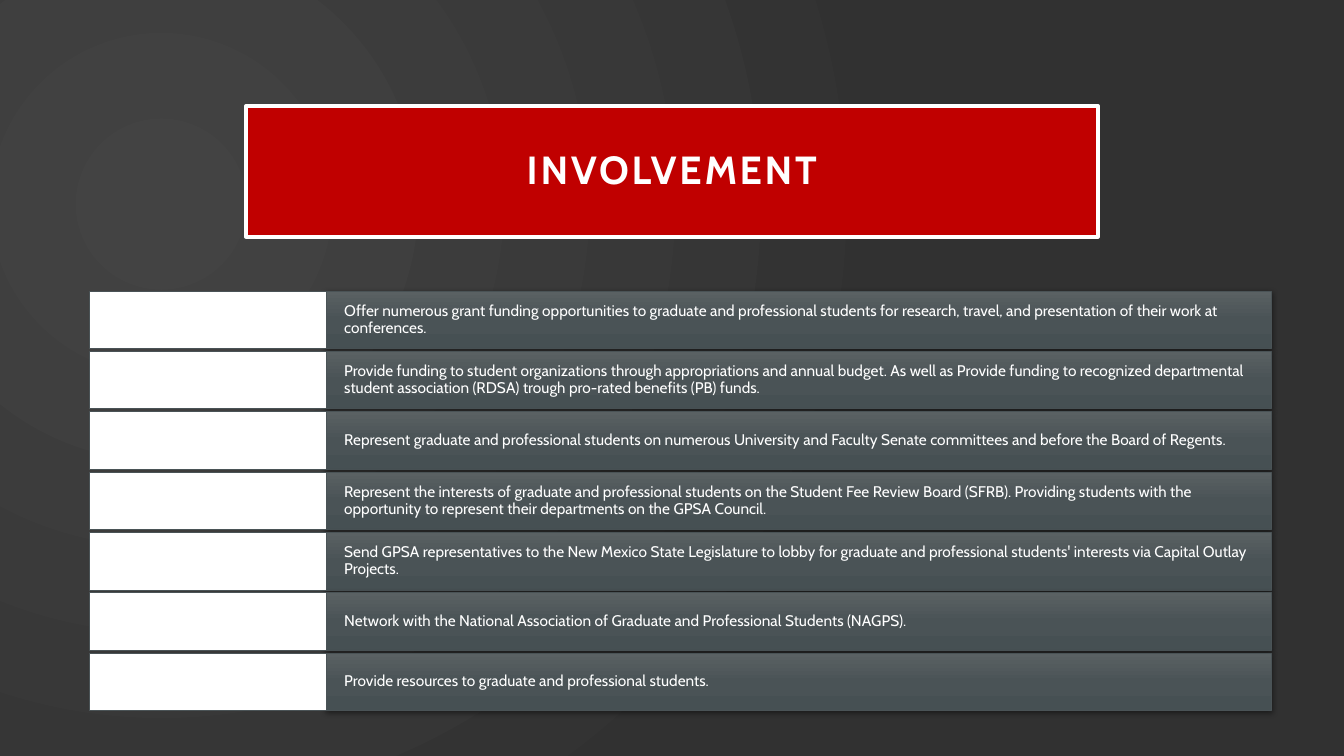
from lxml.etree import SubElement
from pptx import Presentation
from pptx.dml.color import RGBColor
from pptx.enum.shapes import MSO_SHAPE
from pptx.enum.text import MSO_ANCHOR, MSO_AUTO_SIZE, PP_ALIGN
from pptx.oxml import parse_xml
from pptx.oxml.ns import nsdecls, qn
from pptx.util import Pt

COLORS = {
    "red": "C00000", "white": "FFFFFF", "slate": "4A5356",
    "slate_light": "5A6163", "slate_dark": "465053",
    "background_light": "434343", "background_dark": "313131", "black": "000000",
}
FONT = "Cabin"
ACTIVITIES = [
    "Offer numerous grant funding opportunities to graduate and professional students for research, travel, and presentation of their work at conferences.",
    "Provide funding to student organizations through appropriations and annual budget. As well as Provide funding to recognized departmental student association (RDSA) trough pro-rated benefits (PB) funds.",
    "Represent graduate and professional students on numerous University and Faculty Senate committees and before the Board of Regents.",
    "Represent the interests of graduate and professional students on the Student Fee Review Board (SFRB). Providing students with the opportunity to represent their departments on the GPSA Council.",
    "Send GPSA representatives to the New Mexico State Legislature to lobby for graduate and professional students' interests via Capital Outlay Projects.",
    "Network with the National Association of Graduate and Professional Students (NAGPS).",
    "Provide resources to graduate and professional students.",
]


def set_gradient(properties, color_names, direction):
    """Replace a solid fill by a gradient with evenly spaced stops."""
    step = 100000 // (len(color_names) - 1)
    stops = "".join(
        f'<a:gs pos="{index * step}"><a:srgbClr val="{COLORS[name]}"/></a:gs>'
        for index, name in enumerate(color_names))
    gradient = parse_xml(
        f'<a:gradFill {nsdecls("a")} rotWithShape="1"><a:gsLst>{stops}</a:gsLst>{direction}</a:gradFill>')
    properties.replace(properties.find(qn("a:solidFill")), gradient)


def format_box(shape, fill, line, line_width):
    shape.fill.solid()
    shape.fill.fore_color.rgb = RGBColor.from_string(COLORS[fill])
    shape.line.color.rgb = RGBColor.from_string(COLORS[line])
    shape.line.width = Pt(line_width)


presentation = Presentation()
presentation.slide_width, presentation.slide_height = Pt(960), Pt(540)
slide = presentation.slides.add_slide(presentation.slide_layouts[5])

# Background with a radial gradient
slide.background.fill.solid()
set_gradient(
    slide._element.find(".//" + qn("p:bgPr")), ["background_light", "background_dark"],
    '<a:path path="circle"><a:fillToRect l="50000" t="55000" r="125000" b="100000"/></a:path>')

# Title
title = slide.shapes.title
title.left, title.top, title.width, title.height = Pt(175.7), Pt(75.6), Pt(608.6), Pt(93.6)
format_box(title, "red", "white", 2.5)
frame = title.text_frame
frame.text = "INVOLVEMENT"
frame.auto_size = MSO_AUTO_SIZE.NONE
frame.vertical_anchor = MSO_ANCHOR.MIDDLE
frame.margin_left = frame.margin_right = frame.margin_top = frame.margin_bottom = Pt(14.4)
paragraph = frame.paragraphs[0]
paragraph.alignment = PP_ALIGN.CENTER
paragraph.line_spacing = 0.9
paragraph.font.name, paragraph.font.size, paragraph.font.bold = FONT, Pt(28), True
paragraph.font.color.rgb = RGBColor.from_string(COLORS["white"])
paragraph.runs[0].font._element.set("spc", "200")

# Activity rows: a text bar and a white label box
LABEL_LEFT, BAR_LEFT, BAR_WIDTH = 64, 232.8, 675
FIRST_TOP, ROW_PITCH, ROW_HEIGHT = 208, 43.1, 41
for row, activity in enumerate(ACTIVITIES):
    top = Pt(FIRST_TOP + row * ROW_PITCH)
    bar = slide.shapes.add_shape(
        MSO_SHAPE.RECTANGLE, Pt(BAR_LEFT), top, Pt(BAR_WIDTH), Pt(ROW_HEIGHT))
    format_box(bar, "slate", "slate", 0.5)
    bar_properties = bar._element.spPr
    set_gradient(bar_properties, ["slate_light", "slate", "slate_dark"],
                 '<a:lin ang="5400000" scaled="0"/>')

    # Soft shadow below the bar
    bar.shadow.inherit = False
    shadow = SubElement(
        bar_properties.find(qn("a:effectLst")), qn("a:outerShdw"),
        blurRad=str(Pt(4.4)), dist=str(Pt(1.2)), dir="5400000", rotWithShape="0")
    shadow_color = SubElement(shadow, qn("a:srgbClr"), val=COLORS["black"])
    SubElement(shadow_color, qn("a:alpha"), val="45000")

    frame = bar.text_frame
    frame.text = activity
    frame.word_wrap = True
    frame.vertical_anchor = MSO_ANCHOR.MIDDLE
    frame.margin_left = frame.margin_right = Pt(13)
    frame.margin_top = frame.margin_bottom = Pt(10)
    paragraph = frame.paragraphs[0]
    paragraph.alignment = PP_ALIGN.LEFT
    paragraph.line_spacing = 0.9
    paragraph.font.name, paragraph.font.size = FONT, Pt(11)
    paragraph.font.color.rgb = RGBColor.from_string(COLORS["white"])

    label = slide.shapes.add_shape(
        MSO_SHAPE.RECTANGLE, Pt(LABEL_LEFT), top, Pt(BAR_LEFT - LABEL_LEFT), Pt(ROW_HEIGHT))
    format_box(label, "white", "slate", 0.5)
    label.shadow.inherit = False

presentation.save("out.pptx")
